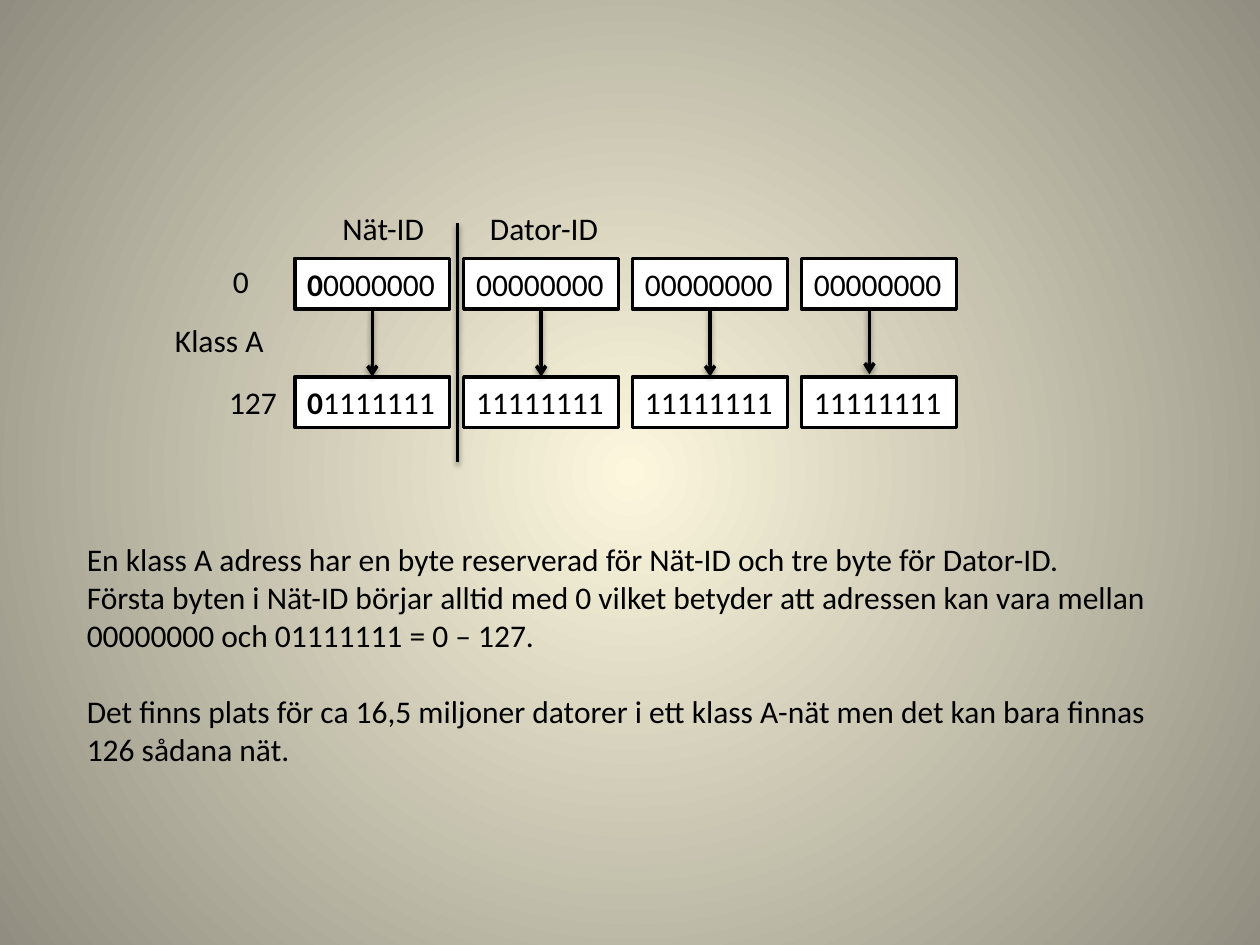
from dataclasses import dataclass
from typing import NamedTuple

from lxml.etree import SubElement
from pptx import Presentation
from pptx.dml.color import RGBColor
from pptx.enum.shapes import MSO_CONNECTOR, MSO_SHAPE
from pptx.enum.text import MSO_ANCHOR, MSO_AUTO_SIZE, PP_ALIGN
from pptx.oxml.ns import qn
from pptx.util import Pt


@dataclass(frozen=True)
class Theme:
    font: str = "Calibri"
    size: float = 18
    line_width: float = 2
    ink: RGBColor = RGBColor(0x00, 0x00, 0x00)
    paper: RGBColor = RGBColor(0xFF, 0xFF, 0xFF)
    glow: RGBColor = RGBColor(0xFC, 0xF7, 0xDD)
    edge: RGBColor = RGBColor(0x91, 0x8E, 0x81)


class Label(NamedTuple):
    text: str
    left: float
    top: float
    width: float
    height: float = 29


class ByteRow(NamedTuple):
    top: float
    octets: tuple[str, ...]


THEME = Theme()
BYTE_LEFT, BYTE_PITCH, BYTE_WIDTH, BYTE_HEIGHT = 168.5, 96.5, 88.5, 29
FIRST_ADDRESS = ByteRow(147.6, ("00000000",) * 4)
LAST_ADDRESS = ByteRow(215.3, ("01111111",) + ("11111111",) * 3)
RANGE_LABELS = (
    Label("Klass A", 92.9, 180, 65.5),
    Label("0", 126, 146.2, 23.8),
    Label("127", 123.8, 215.3, 42.5),
)
ID_LABELS = (
    Label("Nät-ID", 188.6, 115.9, 61.9),
    Label("Dator-ID", 272.9, 115.9, 77.8),
)
EXPLANATION = Label(
    "En klass A adress har en byte reserverad för Nät-ID och tre byte för Dator-ID.\n"
    "Första byten i Nät-ID börjar alltid med 0 vilket betyder att adressen kan vara mellan\n"
    "00000000 och 01111111 = 0 – 127.\n"
    "Det finns plats för ca 16,5 miljoner datorer i ett klass A-nät men det kan bara finnas\n"
    "126 sådana nät.",
    42.5, 305.3, 627, 138.2,
)


def write(shape, text: str, *, bold_lead: int = 0, gap_before: int | None = None) -> None:
    frame = shape.text_frame
    frame.word_wrap = False
    frame.auto_size = MSO_AUTO_SIZE.SHAPE_TO_FIT_TEXT
    frame.vertical_anchor = MSO_ANCHOR.TOP
    for index, line in enumerate(text.split("\n")):
        paragraph = frame.add_paragraph() if index else frame.paragraphs[0]
        paragraph.alignment = PP_ALIGN.LEFT
        if index == gap_before:
            paragraph.space_before = Pt(22)
        for part, bold in ((line[:bold_lead], True), (line[bold_lead:], False)):
            if part:
                run = paragraph.add_run()
                run.text = part
                run.font.name = THEME.font
                run.font.size = Pt(THEME.size)
                run.font.bold = bold
                run.font.color.rgb = THEME.ink


def add_label(shapes, label: Label, gap_before: int | None = None) -> None:
    box = shapes.add_textbox(Pt(label.left), Pt(label.top), Pt(label.width), Pt(label.height))
    write(box, label.text, gap_before=gap_before)


def add_byte_row(shapes, row: ByteRow) -> list:
    boxes = []
    for column, octet in enumerate(row.octets):
        box = shapes.add_shape(
            MSO_SHAPE.RECTANGLE, Pt(BYTE_LEFT + column * BYTE_PITCH), Pt(row.top),
            Pt(BYTE_WIDTH), Pt(BYTE_HEIGHT),
        )
        box.shadow.inherit = False
        box.fill.solid()
        box.fill.fore_color.rgb = THEME.paper
        box.line.color.rgb = THEME.ink
        box.line.width = Pt(THEME.line_width)
        write(box, octet, bold_lead=0 if column else 1)
        boxes.append(box)
    return boxes


def add_line(shapes, x: float, top: float, bottom: float, *, arrow: bool = False):
    line = shapes.add_connector(MSO_CONNECTOR.STRAIGHT, Pt(x), Pt(top), Pt(x), Pt(bottom))
    line.line.color.rgb = THEME.ink
    line.line.width = Pt(THEME.line_width)
    properties = line._element.spPr
    if arrow:
        SubElement(properties.find(qn("a:ln")), qn("a:tailEnd"), type="arrow")
    effects = SubElement(properties, qn("a:effectLst"))
    shadow = SubElement(
        effects, qn("a:outerShdw"), blurRad=str(Pt(3.1)), dist=str(Pt(1.6)),
        dir="5400000", rotWithShape="0",
    )
    shade = SubElement(shadow, qn("a:srgbClr"), val=str(THEME.ink))
    SubElement(shade, qn("a:alpha"), val="38000")
    return line


def paint_background(slide) -> None:
    fill = slide.background.fill
    fill.gradient()
    for stop, color, position in zip(fill.gradient_stops, (THEME.glow, THEME.edge), (0, 1)):
        stop.color.rgb = color
        stop.position = position
    gradient = slide._element.find(".//" + qn("a:gradFill"))
    gradient.remove(gradient.find(qn("a:lin")))
    circle = SubElement(gradient, qn("a:path"), path="circle")
    SubElement(circle, qn("a:fillToRect"), l="50000", t="50000", r="50000", b="50000")


def main() -> None:
    """Build the slide on class A network addresses."""
    presentation = Presentation()
    presentation.slide_width, presentation.slide_height = Pt(720), Pt(540)
    slide = presentation.slides.add_slide(presentation.slide_layouts[6])
    paint_background(slide)

    diagram = slide.shapes.add_group_shape().shapes
    first_bytes = add_byte_row(diagram, FIRST_ADDRESS)
    last_bytes = add_byte_row(diagram, LAST_ADDRESS)
    for first, last in zip(first_bytes[:3], last_bytes):
        center = (first.left + first.width / 2) / Pt(1)
        arrow = add_line(
            diagram, center, FIRST_ADDRESS.top + BYTE_HEIGHT, LAST_ADDRESS.top, arrow=True
        )
        arrow.begin_connect(first, 2)
        arrow.end_connect(last, 0)
    add_line(diagram, 496.8, 175.7, 213.8, arrow=True)
    for label in RANGE_LABELS:
        add_label(diagram, label)

    add_line(slide.shapes, 261.4, 127.4, 264.2)
    for label in ID_LABELS:
        add_label(slide.shapes, label)
    add_label(slide.shapes, EXPLANATION, gap_before=3)
    presentation.save("out.pptx")


if __name__ == "__main__":
    main()
